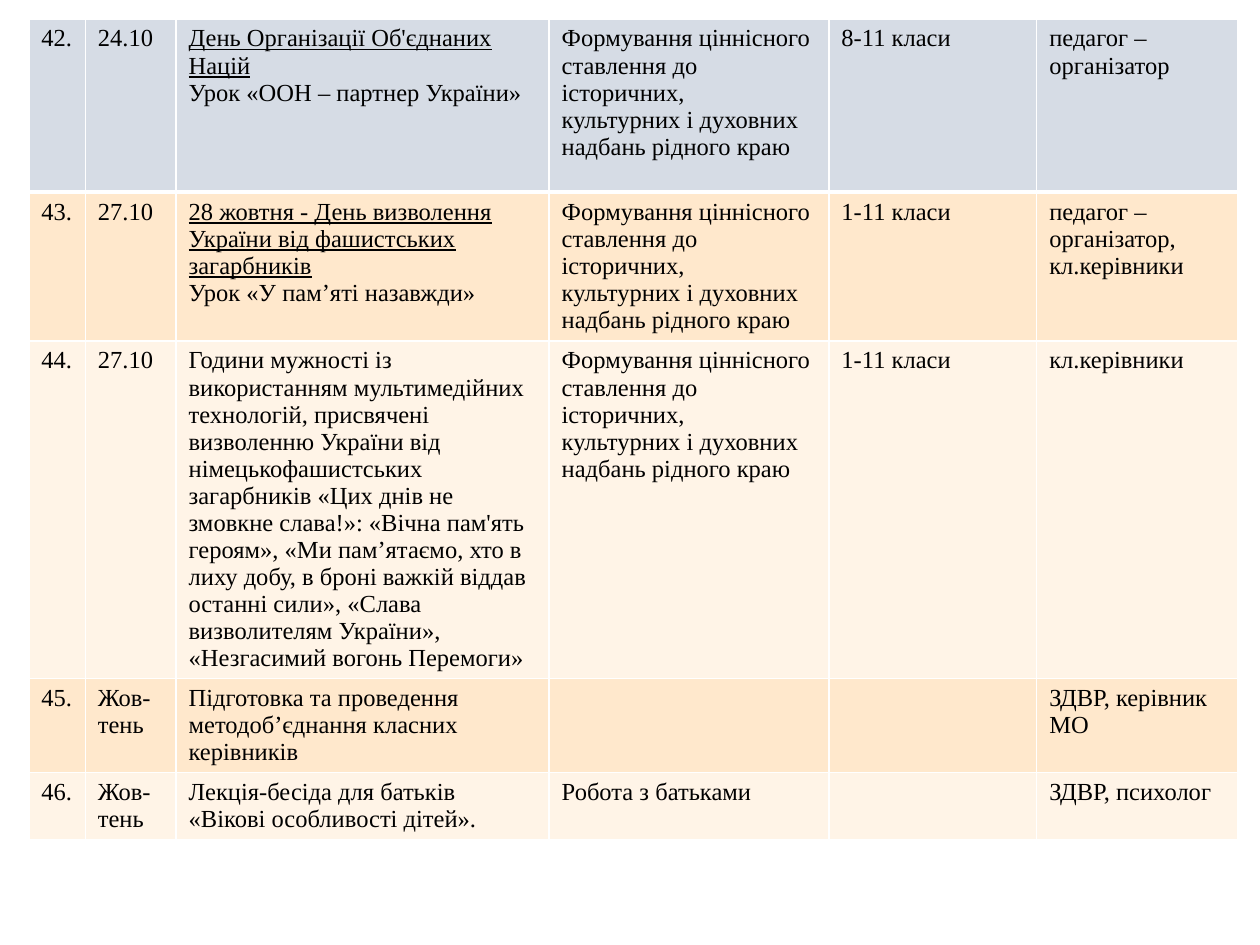
from dataclasses import dataclass

from lxml import etree
from pptx import Presentation
from pptx import util as u
from pptx.dml import color
from pptx.oxml import ns

COLUMN_WIDTHS = (1.14, 1.83, 7.52, 5.64, 4.19, 4.06)
BODY_FILLS = ("FFE8CC", "FFF4E7")
HEADER_FILL = "D6DCE5"
BORDER_COLOR = "FFFFFF"
VALUES_GOAL = (
    "Формування ціннісного ставлення до історичних,",
    "культурних і духовних надбань рідного краю",
)


@dataclass(frozen=True)
class Event:
    height: float
    number: str
    date: str
    activity: tuple[str, ...]
    goal: tuple[str, ...] = ()
    classes: str = ""
    responsible: str = ""
    heading: str = ""


EVENTS = (
    Event(3.49, "42.", "24.10", ("Урок «ООН – партнер України»",), VALUES_GOAL,
          "8-11 класи", "педагог –організатор",
          heading="День Організації Об'єднаниx Націй"),
    Event(3.0, "43.", "27.10", ("Урок «У пам’яті назавжди»",), VALUES_GOAL,
          "1-11 класи", "педагог –організатор, кл.керівники",
          heading="28 жовтня - День визволення України вiд фашистських загарбників"),
    Event(6.81, "44.", "27.10", (
        "Години мужності із використанням мультимедійних технологій, присвячені "
        "визволенню України від німецькофашистських загарбників «Цих днів не",
        "змовкне слава!»: «Вічна пам'ять героям», «Ми пам’ятаємо, хто в лиху добу, "
        "в броні важкій віддав останні сили», «Слава визволителям України», "
        "«Незгасимий вогонь Перемоги»",
    ), VALUES_GOAL, "1-11 класи", "кл.керівники"),
    Event(1.88, "45.", "Жов-тень",
          ("Підготовка та проведення методоб’єднання класних керівників",),
          responsible="ЗДВР, керівник МО"),
    Event(1.35, "46.", "Жов-тень",
          ("Лекція-бесіда для батьків «Вікові особливості дітей».",),
          ("Робота з батьками",), responsible="ЗДВР, психолог"),
)


def rgb(value: str) -> color.RGBColor:
    return color.RGBColor.from_string(value)


def add_span(para, content: str, underline: bool = False) -> None:
    span = para.add_run()
    span.text = content
    formats = {"name": "Times New Roman", "size": u.Pt(14),
               "bold": False, "underline": underline}
    for name, value in formats.items():
        setattr(span.font, name, value)
    span.font.color.rgb = rgb("000000")


def write_cell(cell, lines: tuple[str, ...], heading: str = "") -> None:
    for index, line in enumerate(lines):
        frame = cell.text_frame
        para = frame.add_paragraph() if index else frame.paragraphs[0]
        if heading and index == 0:
            add_span(para, heading, underline=True)
            para.add_line_break()
        if line:
            add_span(para, line)


def style_cell(cell, fill: str, top: float, bottom: float) -> None:
    properties = cell._tc.get_or_add_tcPr()
    for side, points in {"L": 1, "R": 1, "T": top, "B": bottom}.items():
        border = etree.SubElement(properties, ns.qn(f"a:ln{side}"), w=str(u.Pt(points)))
        paint = etree.SubElement(border, ns.qn("a:solidFill"))
        etree.SubElement(paint, ns.qn("a:srgbClr"), val=BORDER_COLOR)
    cell.fill.solid()
    cell.fill.fore_color.rgb = rgb(fill)


def draw_schedule(page, events: tuple[Event, ...]) -> None:
    table = page.shapes.add_table(
        len(events), len(COLUMN_WIDTHS), u.Cm(0.58), u.Cm(0.38),
        u.Cm(sum(COLUMN_WIDTHS)), u.Cm(sum(event.height for event in events)),
    ).table
    for column, width in zip(table.columns, COLUMN_WIDTHS):
        column.width = u.Cm(width)
    for index, (row, event) in enumerate(zip(table.rows, events)):
        row.height = u.Cm(event.height)
        fill = BODY_FILLS[(index - 1) % 2] if index else HEADER_FILL
        contents = ((event.number,), (event.date,), event.activity,
                    event.goal, (event.classes,), (event.responsible,))
        for position, (cell, lines) in enumerate(zip(row.cells, contents)):
            write_cell(cell, lines, event.heading if position == 2 else "")
            style_cell(cell, fill, top=3 if index == 1 else 1,
                       bottom=3 if index == 0 else 1)


def main() -> None:
    deck = Presentation()
    deck.slide_width, deck.slide_height = u.Cm(25.4), u.Cm(19.05)
    page = deck.slides.add_slide(deck.slide_layouts[6])
    draw_schedule(page, EVENTS)
    deck.save("out.pptx")


if __name__ == "__main__":
    main()
